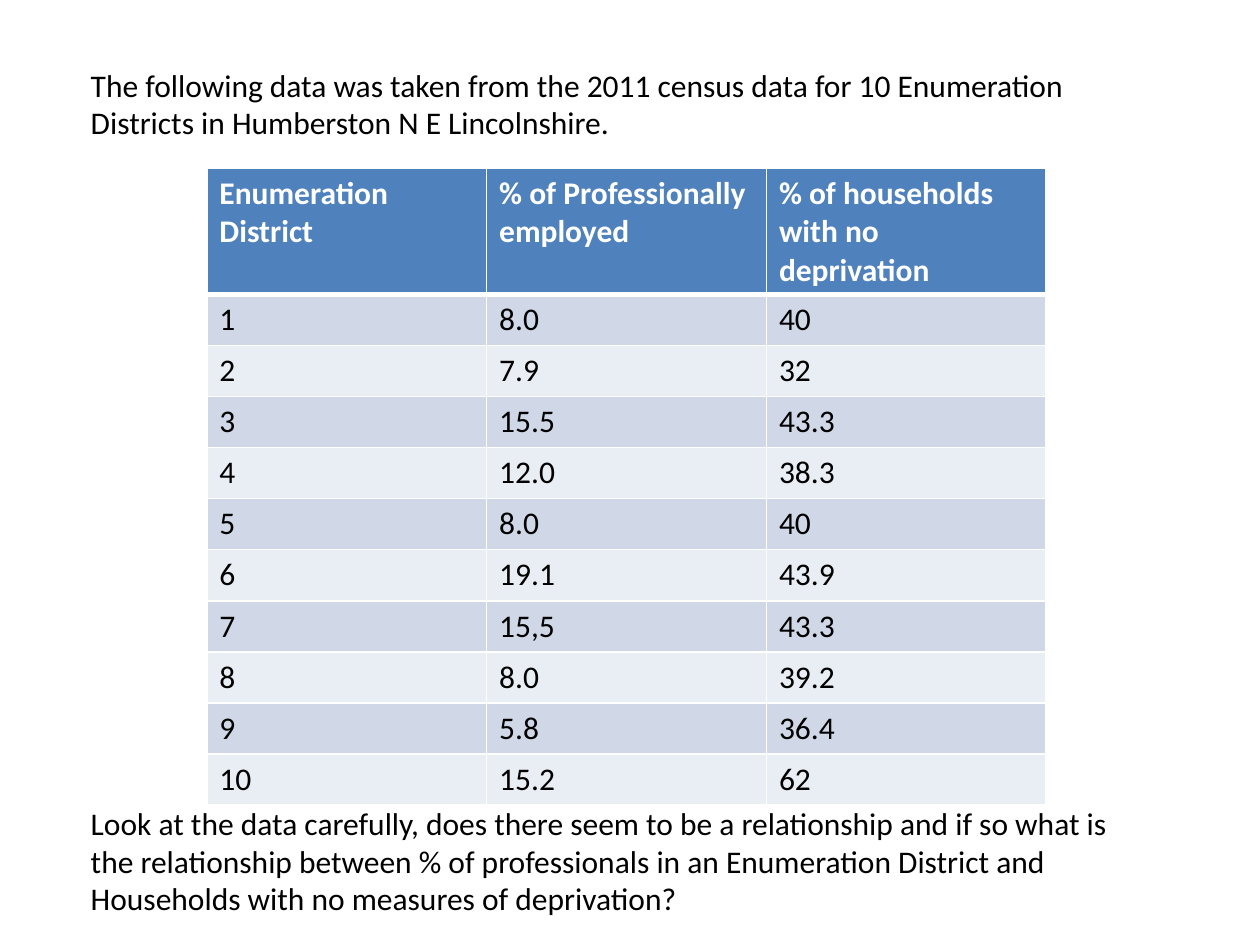
from lxml.etree import SubElement
from pptx import Presentation
from pptx.dml.color import RGBColor
from pptx.enum.text import MSO_AUTO_SIZE as AutoSize
from pptx.oxml.ns import qn
from pptx.util import Cm, Pt

BLACK = RGBColor(0x00, 0x00, 0x00)
WHITE = RGBColor(0xFF, 0xFF, 0xFF)
HEADER_BLUE = RGBColor(0x4F, 0x81, 0xBD)
BAND_DARK = RGBColor(0xD0, 0xD8, 0xE8)
BAND_LIGHT = RGBColor(0xE9, 0xED, 0xF4)

INTRODUCTION = (
    "The following data was taken from the 2011 census data for 10 Enumeration "
    "Districts in Humberston N E Lincolnshire."
)
QUESTION = (
    "Look at the data carefully, does there seem to be a relationship and if so "
    "what is the relationship between % of professionals in an Enumeration District "
    "and Households with no measures of deprivation?"
)
HEADINGS = (
    "Enumeration District",
    "% of Professionally employed",
    "% of households with no deprivation",
)
DISTRICTS = [
    ("1", "8.0", "40"),
    ("2", "7.9", "32"),
    ("3", "15.5", "43.3"),
    ("4", "12.0", "38.3"),
    ("5", "8.0", "40"),
    ("6", "19.1", "43.9"),
    ("7", "15,5", "43.3"),
    ("8", "8.0", "39.2"),
    ("9", "5.8", "36.4"),
    ("10", "15.2", "62"),
]


class SlideBuilder:
    font_name = "Calibri"
    font_size = Pt(18)

    def __init__(self, slide):
        self.slide = slide

    def style_text(self, text_frame, color, bold=False):
        for paragraph in text_frame.paragraphs:
            for run in paragraph.runs:
                run.font.name = self.font_name
                run.font.size = self.font_size
                run.font.bold = bold
                run.font.color.rgb = color

    def add_text(self, text, left, top, width, height):
        shape = self.slide.shapes.add_textbox(Cm(left), Cm(top), Cm(width), Cm(height))
        text_frame = shape.text_frame
        text_frame.word_wrap = True
        text_frame.auto_size = AutoSize.SHAPE_TO_FIT_TEXT
        text_frame.text = text
        self.style_text(text_frame, BLACK)

    def add_borders(self, cell, bottom_width):
        properties = cell._tc.get_or_add_tcPr()
        widths = {"a:lnL": 1, "a:lnR": 1, "a:lnT": 1, "a:lnB": bottom_width}
        for side, width in widths.items():
            line = SubElement(properties, qn(side), w=str(Pt(width)))
            fill = SubElement(line, qn("a:solidFill"))
            SubElement(fill, qn("a:srgbClr"), val=str(WHITE))

    def add_cell(self, cell, text, row):
        is_header = row == 0
        cell.text = text
        self.style_text(cell.text_frame, WHITE if is_header else BLACK, is_header)
        self.add_borders(cell, 3 if is_header else 1)
        cell.fill.solid()
        if is_header:
            cell.fill.fore_color.rgb = HEADER_BLUE
        else:
            cell.fill.fore_color.rgb = BAND_DARK if row % 2 else BAND_LIGHT

    def add_table(self, records, left, top, column_width, row_height):
        rows, columns = len(records), len(records[0])
        table = self.slide.shapes.add_table(
            rows, columns, Cm(left), Cm(top),
            Cm(column_width * columns), Cm(row_height * rows),
        ).table
        for column in table.columns:
            column.width = Cm(column_width)
        for row, record in enumerate(records):
            table.rows[row].height = Cm(row_height)
            for column, text in enumerate(record):
                self.add_cell(table.cell(row, column), text, row)


def main():
    presentation = Presentation()
    presentation.slide_width = Cm(25.4)
    presentation.slide_height = Cm(19.05)
    builder = SlideBuilder(presentation.slides.add_slide(presentation.slide_layouts[6]))
    builder.add_text(INTRODUCTION, 1.58, 1.2, 22.02, 1.8)
    builder.add_table([HEADINGS, *DISTRICTS], 4.17, 3.39, 5.64, 1.03)
    builder.add_text(QUESTION, 1.58, 16.08, 21.03, 2.57)
    presentation.save("out.pptx")


if __name__ == "__main__":
    main()
